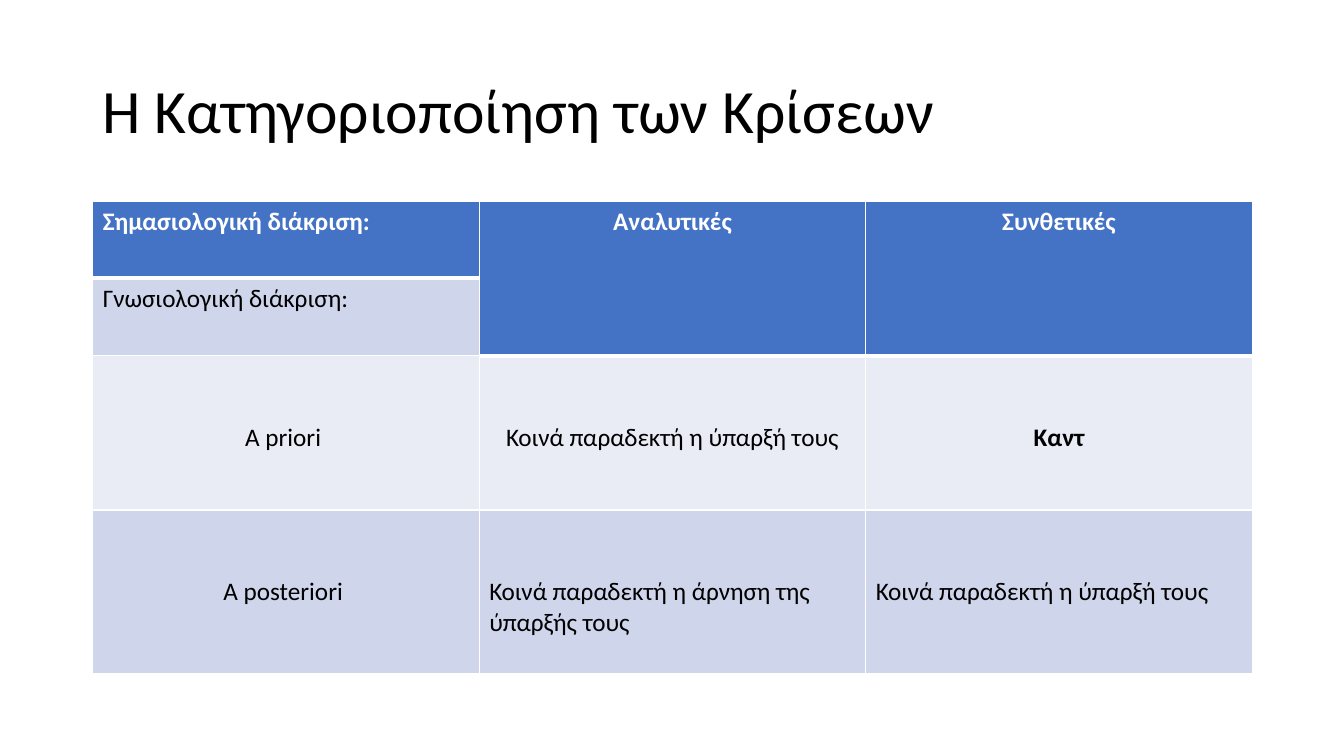
from dataclasses import dataclass

import pptx
import pptx.dml.color
import pptx.enum.text
import pptx.oxml
import pptx.oxml.ns
import pptx.util

Inches = pptx.util.Inches
RGBColor = pptx.dml.color.RGBColor
CENTER = pptx.enum.text.PP_ALIGN.CENTER
LEFT = pptx.enum.text.PP_ALIGN.LEFT


@dataclass(frozen=True)
class Theme:
    font: str = "Calibri"
    title_size: int = 44
    body_size: int = 18
    text: str = "000000"
    header_text: str = "FFFFFF"
    header_fill: str = "4472C4"
    dark_band: str = "CFD5EA"
    light_band: str = "E9EBF5"
    border: str = "FFFFFF"
    thin: int = 1
    thick: int = 3


THEME = Theme()
ROW_HEIGHTS = (0.76, 0.77, 1.53, 1.62)
HEADER_CELLS = {(0, 0), (0, 1), (0, 2), (1, 1), (1, 2)}
JUDGEMENTS = (
    (0, 0, "Σημασιολογική διάκριση:", LEFT),
    (0, 1, "Αναλυτικές", CENTER),
    (0, 2, "Συνθετικές", CENTER),
    (1, 0, "Γνωσιολογική διάκριση:", LEFT),
    (2, 0, "A priori ", CENTER),
    (2, 1, "Κοινά παραδεκτή η ύπαρξή τους", CENTER),
    (2, 2, "Καντ", CENTER),
    (3, 0, "A posteriori ", CENTER),
    (3, 1, "Κοινά παραδεκτή η άρνηση της ύπαρξής τους", LEFT),
    (3, 2, "Κοινά παραδεκτή η ύπαρξή τους", LEFT),
)
BOLD_CELLS = HEADER_CELLS | {(2, 2)}


def style_paragraph(paragraph, size, color, bold=False):
    paragraph.font.name = THEME.font
    paragraph.font.size = pptx.util.Pt(size)
    paragraph.font.bold = bold
    paragraph.font.color.rgb = RGBColor.from_string(color)


def add_title(slide, left, top, width, height):
    shape = slide.shapes.add_textbox(
        Inches(left), Inches(top), Inches(width), Inches(height))
    frame = shape.text_frame
    frame.word_wrap = True
    frame.vertical_anchor = pptx.enum.text.MSO_ANCHOR.MIDDLE
    paragraph = frame.paragraphs[0]
    paragraph.text = "Η Κατηγοριοποίηση των Κρίσεων"
    paragraph.line_spacing = 0.9
    style_paragraph(paragraph, THEME.title_size, THEME.text)


def bottom_width(row, column):
    return THEME.thick if (row, column) in HEADER_CELLS else THEME.thin


def add_borders(cell, row, column):
    widths = {
        "L": THEME.thin,
        "R": THEME.thin,
        "T": bottom_width(row - 1, column),
        "B": bottom_width(row, column),
    }
    properties = cell._tc.get_or_add_tcPr()
    for index, (side, width) in enumerate(widths.items()):
        properties.insert(index, pptx.oxml.parse_xml(
            f'<a:ln{side} {pptx.oxml.ns.nsdecls("a")} w="{pptx.util.Pt(width)}">'
            f'<a:solidFill><a:srgbClr val="{THEME.border}"/></a:solidFill>'
            f'</a:ln{side}>'))


def cell_fill(row, column):
    if (row, column) in HEADER_CELLS:
        return THEME.header_fill
    return THEME.light_band if row == 2 else THEME.dark_band


def add_judgement_table(slide, left, top, width):
    row_count, column_count = len(ROW_HEIGHTS), 3
    table = slide.shapes.add_table(
        row_count, column_count, Inches(left), Inches(top),
        Inches(width), Inches(sum(ROW_HEIGHTS))).table
    for row, height in zip(table.rows, ROW_HEIGHTS):
        row.height = Inches(height)
    for column in table.columns:
        column.width = Inches(width / column_count)
    for row in range(row_count):
        for column in range(column_count):
            cell = table.cell(row, column)
            cell.fill.solid()
            cell.fill.fore_color.rgb = RGBColor.from_string(cell_fill(row, column))
            add_borders(cell, row, column)
    for column in (1, 2):
        table.cell(0, column).merge(table.cell(1, column))
    for row, column, text, alignment in JUDGEMENTS:
        cell = table.cell(row, column)
        cell.margin_top = Inches(0.66 if row >= 2 else 0.05)
        paragraph = cell.text_frame.paragraphs[0]
        paragraph.text = text
        paragraph.alignment = alignment
        color = THEME.header_text if (row, column) in HEADER_CELLS else THEME.text
        style_paragraph(paragraph, THEME.body_size, color, (row, column) in BOLD_CELLS)


def main():
    presentation = pptx.Presentation()
    presentation.slide_width = Inches(13.33)
    presentation.slide_height = Inches(7.5)
    slide = presentation.slides.add_slide(presentation.slide_layouts[6])
    add_title(slide, 0.92, 0.4, 11.5, 1.45)
    add_judgement_table(slide, 0.92, 2, 11.5)
    presentation.save("out.pptx")


if __name__ == "__main__":
    main()
